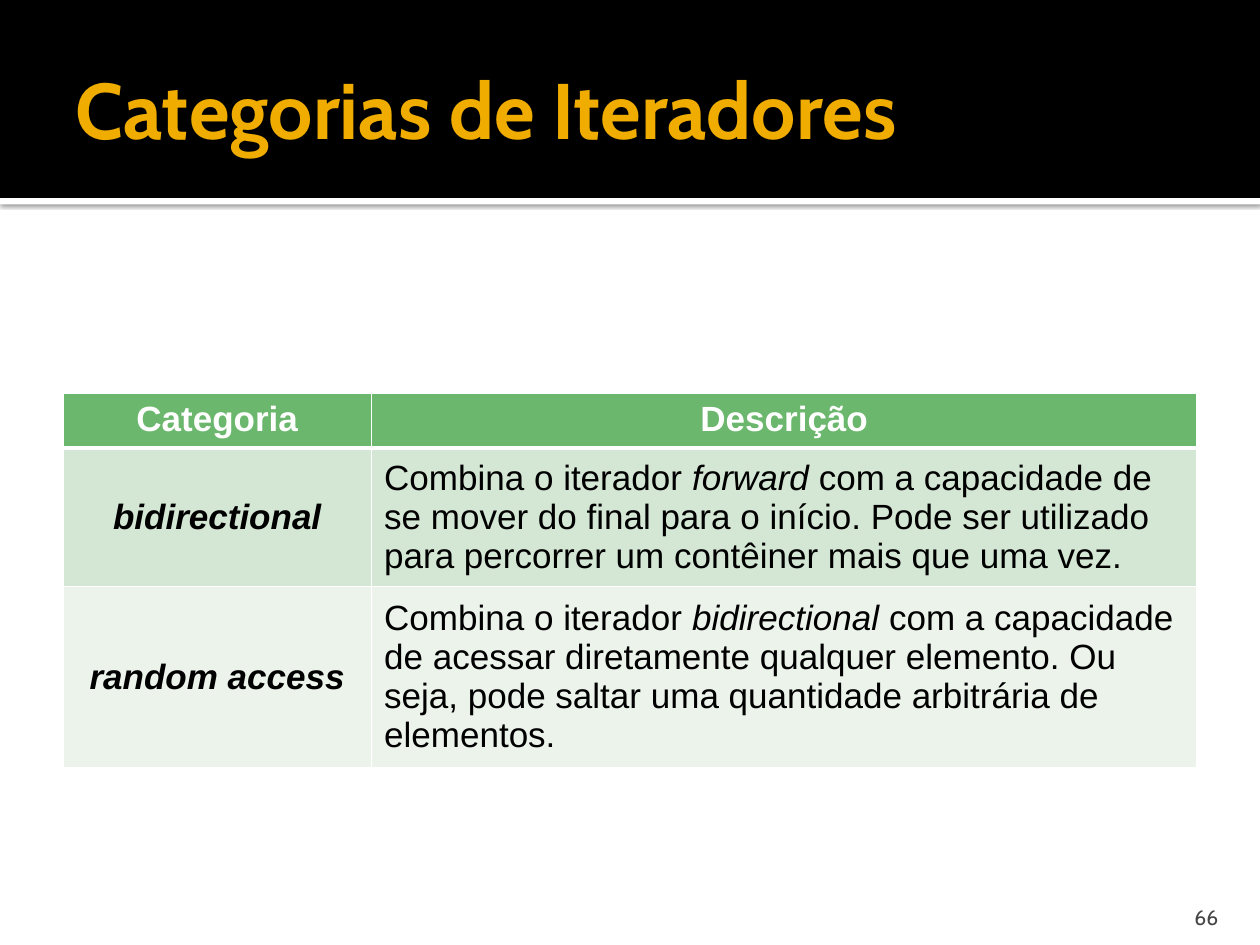
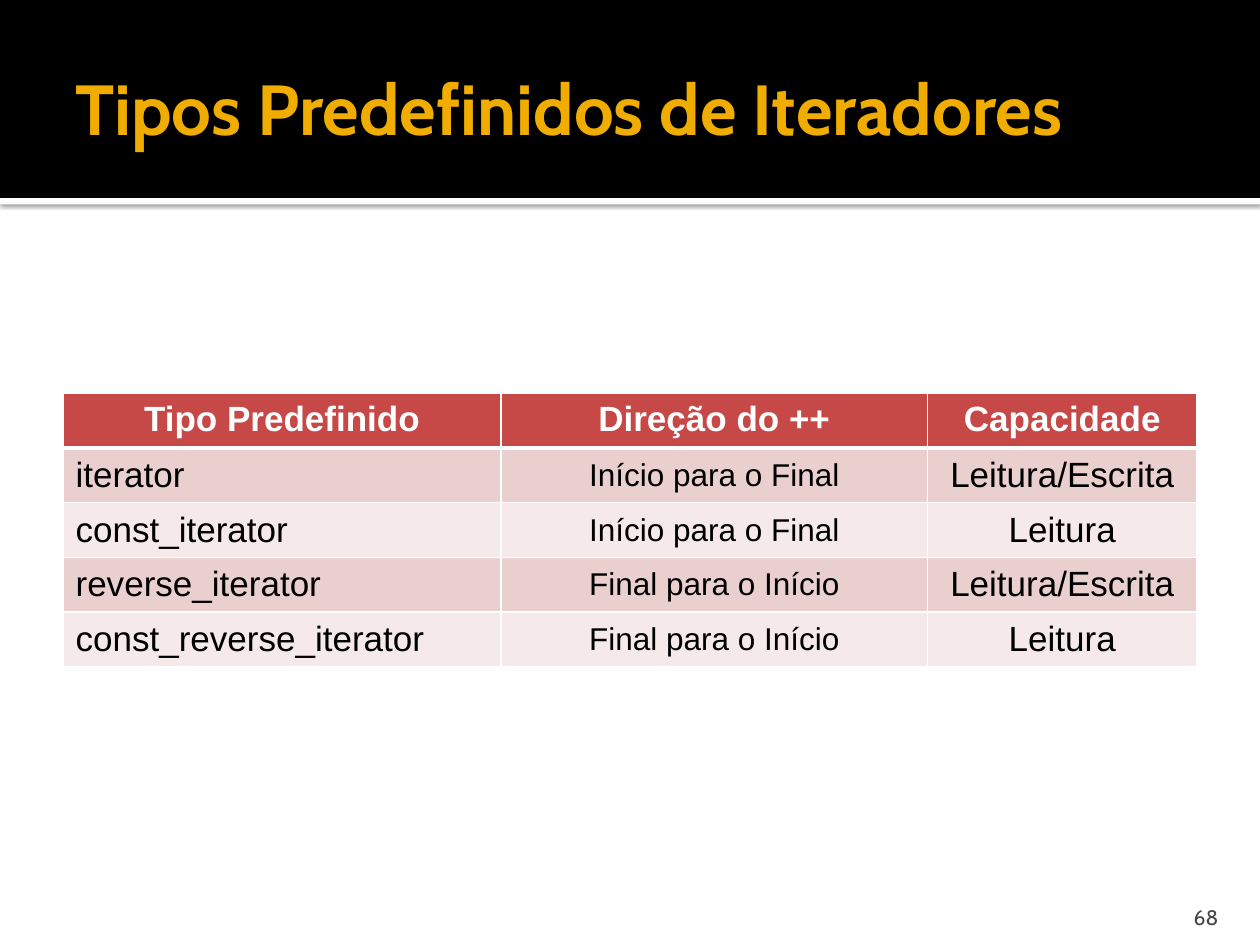
import pptx
import pptx.util
import pptx.dml.color
import pptx.enum.shapes
import pptx.enum.text
from lxml import etree

Cm, Pt = pptx.util.Cm, pptx.util.Pt
ALIGN, ANCHOR = pptx.enum.text.PP_ALIGN, pptx.enum.text.MSO_ANCHOR
DRAWING_NS = "http://schemas.openxmlformats.org/drawingml/2006/main"

# Content: text between asterisks is italic
COLOURS = {
    "black": "000000", "white": "FFFFFF", "title": "F0AD00", "number": "454545",
    "green": "6BB76D", "green_dark": "D4E6D4", "green_light": "EBF3EB",
    "red": "C64847", "red_dark": "EACFCF", "red_light": "F5E9E9",
}
HEADING_FONT, TABLE_FONT = "Cabin", "Arial"
SLIDES = [
    {
        "title": "Categorias de Iteradores", "title_size": 45, "number": 66,
        "hue": "green",
        "header": ["Categoria", "Descrição"],
        "rows": [
            ["*bidirectional*",
             "Combina o iterador *forward* com a capacidade de se mover do final "
             "para o início. Pode ser utilizado para percorrer um contêiner mais "
             "que uma vez."],
            ["*random access*",
             "Combina o iterador *bidirectional* com a capacidade de acessar "
             "diretamente qualquer elemento. Ou seja, pode saltar uma quantidade "
             "arbitrária de elementos."],
        ],
        # width in cm, alignment, text size, bold
        "columns": [(6.22, ALIGN.CENTER, 20, True), (16.64, ALIGN.LEFT, 20, False)],
        "row_heights": [2.6, 3.4],
    },
    {
        "title": "Tipos Predefinidos de Iteradores", "title_size": 40.5, "number": 68,
        "hue": "red",
        "header": ["Tipo Predefinido", "Direção do ++", "Capacidade"],
        "rows": [
            ["iterator", "Início para o Final", "Leitura/Escrita"],
            ["const_iterator", "Início para o Final", "Leitura"],
            ["reverse_iterator", "Final para o Início", "Leitura/Escrita"],
            ["const_reverse_iterator", "Final para o Início", "Leitura"],
        ],
        "columns": [(8.83, ALIGN.LEFT, 20, False), (8.6, ALIGN.CENTER, 18, False),
                    (5.43, ALIGN.CENTER, 20, False)],
        "row_heights": [1.04] * 4,
    },
]

# Layout, in cm
SLIDE_WIDTH, SLIDE_HEIGHT = 25.4, 19.05
BAND_HEIGHT, RULE_HEIGHT = 3.99, 0.13
TABLE_LEFT, TABLE_TOP, HEADER_HEIGHT = 1.27, 7.93, 1.04


def rgb(name):
    return pptx.dml.color.RGBColor.from_string(COLOURS[name])


def write(paragraph, text, font, size, colour, bold=False, align=ALIGN.LEFT):
    paragraph.alignment = align
    for position, part in enumerate(text.split("*")):
        if part:
            run = paragraph.add_run()
            run.text = part
            run.font.name, run.font.size = font, Pt(size)
            run.font.bold, run.font.italic = bold, position % 2 == 1
            run.font.color.rgb = rgb(colour)


def add_band(slide, top, height, colour):
    band = slide.shapes.add_shape(pptx.enum.shapes.MSO_SHAPE.RECTANGLE,
                                  0, Cm(top), Cm(SLIDE_WIDTH), Cm(height))
    band.shadow.inherit = False
    band.fill.solid()
    band.fill.fore_color.rgb = rgb(colour)
    band.line.fill.background()
    return band


def add_soft_shadow(shape):
    effects = shape.element.spPr.find(f"{{{DRAWING_NS}}}effectLst")
    effects.append(etree.fromstring(
        f'<a:outerShdw xmlns:a="{DRAWING_NS}" blurRad="{Pt(2.5)}" dist="{Pt(0.8)}" '
        f'dir="5400000" algn="tl" rotWithShape="0"><a:srgbClr val="{COLOURS["black"]}">'
        '<a:alpha val="60000"/></a:srgbClr></a:outerShdw>'))


def add_text(slide, box, margins, anchor, text, **style):
    frame = slide.shapes.add_textbox(*map(Cm, box)).text_frame
    frame.word_wrap = True
    frame.vertical_anchor = anchor
    (frame.margin_left, frame.margin_top,
     frame.margin_right, frame.margin_bottom) = map(Cm, margins)
    write(frame.paragraphs[0], text, HEADING_FONT, **style)


def add_frame(slide, content):
    """Title band, rule, title and slide number."""
    add_soft_shadow(add_band(slide, BAND_HEIGHT, RULE_HEIGHT, "white"))
    add_band(slide, 0, BAND_HEIGHT, "black")
    add_text(slide, (1.27, 0.43, 21.92, 3.48), (0.25, 0.13, 0.13, 0.13), ANCHOR.MIDDLE,
             content["title"], size=content["title_size"], colour="title", bold=True)
    add_text(slide, (22.78, 17.98, 2.03, 0.76), (0.25, 0.13, 0.25, 0), ANCHOR.BOTTOM,
             str(content["number"]), size=12, colour="number", align=ALIGN.RIGHT)


def paint_cell(cell, fill, top_width, bottom_width):
    properties = cell._tc.get_or_add_tcPr()
    for side, width in zip("LRTB", (1, 1, top_width, bottom_width)):
        properties.append(etree.fromstring(
            f'<a:ln{side} xmlns:a="{DRAWING_NS}" w="{Pt(width)}"><a:solidFill>'
            f'<a:srgbClr val="{COLOURS["white"]}"/></a:solidFill></a:ln{side}>'))
    cell.fill.solid()
    cell.fill.fore_color.rgb = rgb(fill)


def add_iterator_table(slide, content):
    columns, hue = content["columns"], content["hue"]
    heights = [HEADER_HEIGHT] + content["row_heights"]
    width = sum(column[0] for column in columns)
    table = slide.shapes.add_table(
        len(heights), len(columns), Cm(TABLE_LEFT), Cm(TABLE_TOP),
        Cm(width), Cm(sum(heights))).table
    for row, height in zip(table.rows, heights):
        row.height = Cm(height)
    for c, (column_width, align, size, bold) in enumerate(columns):
        table.columns[c].width = Cm(column_width)
        # Header
        head = table.cell(0, c)
        paint_cell(head, hue, 1, 3)
        write(head.text_frame.paragraphs[0], content["header"][c], TABLE_FONT, 20,
              "white", True, ALIGN.CENTER)
        # Body, in alternating shades
        for r, texts in enumerate(content["rows"], start=1):
            cell = table.cell(r, c)
            cell.vertical_anchor = ANCHOR.MIDDLE
            paint_cell(cell, hue + ("_dark" if r % 2 else "_light"), 3 if r == 1 else 1, 1)
            write(cell.text_frame.paragraphs[0], texts[c], TABLE_FONT, size,
                  "black", bold, align)


def main():
    deck = pptx.Presentation()
    deck.slide_width, deck.slide_height = Cm(SLIDE_WIDTH), Cm(SLIDE_HEIGHT)
    for content in SLIDES:
        slide = deck.slides.add_slide(deck.slide_layouts[6])
        add_frame(slide, content)
        add_iterator_table(slide, content)
    deck.save("out.pptx")


if __name__ == "__main__":
    main()
